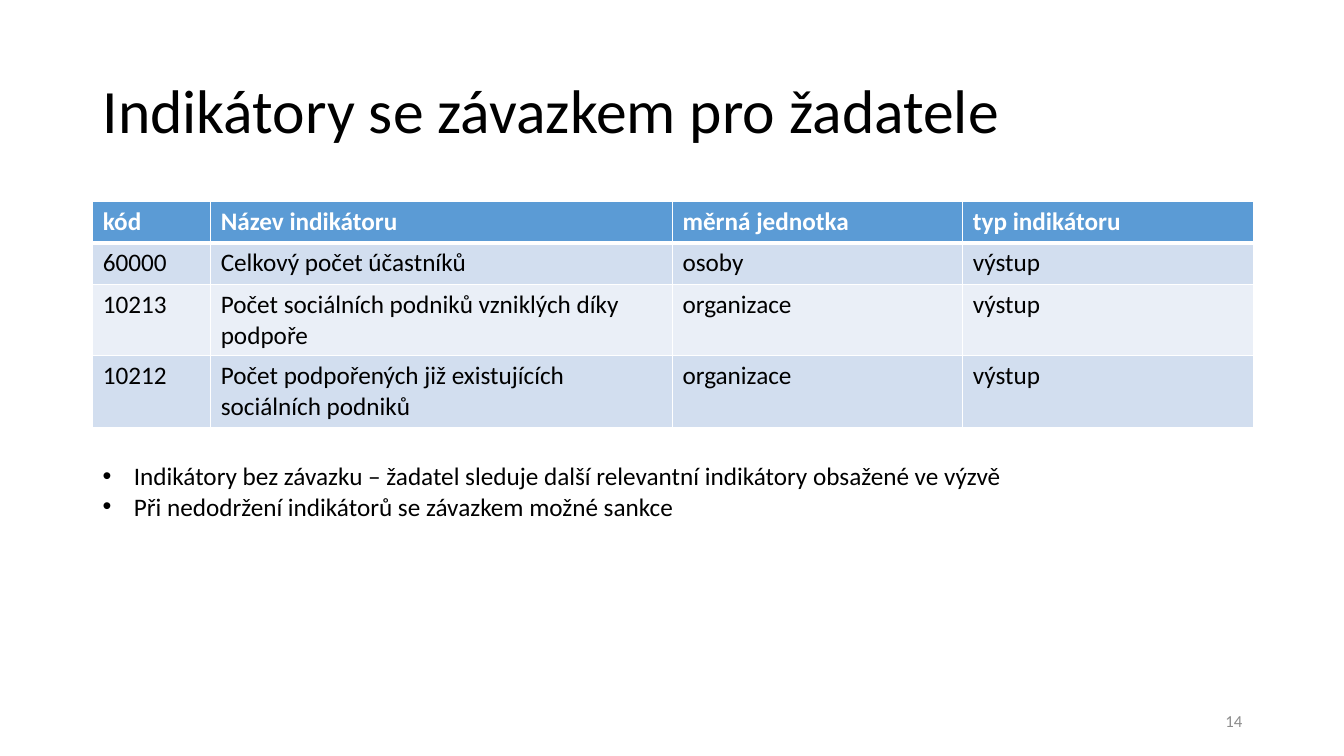
from lxml import etree
from pptx import Presentation
from pptx.dml.color import RGBColor
from pptx.enum.text import MSO_ANCHOR, PP_ALIGN
from pptx.oxml.ns import qn
from pptx.util import Inches, Pt

MIDDLE, TOP = MSO_ANCHOR.MIDDLE, MSO_ANCHOR.TOP
LEFT, RIGHT = PP_ALIGN.LEFT, PP_ALIGN.RIGHT

TITLE = "Indikátory se závazkem pro žadatele"
INDICATORS = [
    ("kód", "Název indikátoru", "měrná jednotka", "typ indikátoru"),
    ("60000", "Celkový počet účastníků", "osoby", "výstup"),
    ("10213", "Počet sociálních podniků vzniklých díky podpoře", "organizace", "výstup"),
    ("10212", "Počet podpořených již existujících sociálních podniků", "organizace", "výstup"),
]
NOTES = [
    "Indikátory bez závazku – žadatel sleduje další relevantní indikátory obsažené ve výzvě",
    "Při nedodržení indikátorů se závazkem možné sankce",
]
PAGE_NUMBER = "14"

FONT = "Calibri"
BLACK, WHITE, GRAY = "000000", "FFFFFF", "8C8C8C"
HEADER_FILL, BANDS = "5B9BD5", ("D2DEEF", "EAEFF7")
MARGIN, CONTENT_WIDTH = 0.92, 11.5
COLUMN_WIDTHS = (1.17, 4.58, 2.88, 2.88)
ROW_HEIGHTS = (0.41, 0.41, 0.71, 0.71)
BULLET_INDENT = Inches(0.31)


def color(hex_value):
    return RGBColor.from_string(hex_value)


def add_run(paragraph, text, size, hex_value=BLACK, bold=False):
    run = paragraph.add_run()
    run.text = text
    run.font.name = FONT
    run.font.size = Pt(size)
    run.font.bold = bold
    run.font.color.rgb = color(hex_value)


def add_text(slide, box, lines, size, hex_value=BLACK, anchor=TOP, align=LEFT):
    frame = slide.shapes.add_textbox(*map(Inches, box)).text_frame
    frame.word_wrap = True
    frame.vertical_anchor = anchor
    for index, line in enumerate(lines):
        paragraph = frame.add_paragraph() if index else frame.paragraphs[0]
        paragraph.alignment = align
        add_run(paragraph, line, size, hex_value)
    return frame


def add_bullet(paragraph):
    properties = paragraph._p.get_or_add_pPr()
    properties.set("marL", str(BULLET_INDENT))
    properties.set("indent", str(-BULLET_INDENT))
    etree.SubElement(properties, qn("a:buFont")).set("typeface", "Arial")
    etree.SubElement(properties, qn("a:buChar")).set("char", "•")


def add_borders(cell, widths):
    properties = cell._tc.get_or_add_tcPr()
    for side, width in widths.items():
        line = etree.SubElement(properties, qn(f"a:ln{side}"), w=str(Pt(width)))
        fill = etree.SubElement(line, qn("a:solidFill"))
        etree.SubElement(fill, qn("a:srgbClr")).set("val", WHITE)


def add_indicators(slide):
    table = slide.shapes.add_table(
        len(INDICATORS), len(COLUMN_WIDTHS), Inches(MARGIN), Inches(2),
        Inches(CONTENT_WIDTH), Inches(sum(ROW_HEIGHTS))).table
    for column, width in zip(table.columns, COLUMN_WIDTHS):
        column.width = Inches(width)
    for index, (row, height, values) in enumerate(zip(table.rows, ROW_HEIGHTS, INDICATORS)):
        row.height = Inches(height)
        header = index == 0
        borders = {"L": 1, "R": 1, "T": 3 if index == 1 else 1, "B": 3 if header else 1}
        for cell, value in zip(row.cells, values):
            add_borders(cell, borders)
            cell.fill.solid()
            cell.fill.fore_color.rgb = color(HEADER_FILL if header else BANDS[(index - 1) % 2])
            add_run(cell.text_frame.paragraphs[0], value, 18, WHITE if header else BLACK, header)


def main():
    deck = Presentation()
    deck.slide_width, deck.slide_height = Inches(13.33), Inches(7.5)
    slide = deck.slides.add_slide(deck.slide_layouts[6])

    title = add_text(slide, (MARGIN, 0.4, CONTENT_WIDTH, 1.45), [TITLE], 44, anchor=MIDDLE)
    title.paragraphs[0].line_spacing = 0.9
    add_indicators(slide)
    add_text(slide, (9.42, 6.95, 3, 0.4), [PAGE_NUMBER], 12, GRAY, MIDDLE, RIGHT)
    notes = add_text(slide, (MARGIN, 4.52, CONTENT_WIDTH, 0.71), NOTES, 18)
    for paragraph in notes.paragraphs:
        add_bullet(paragraph)

    deck.save("out.pptx")


if __name__ == "__main__":
    main()
